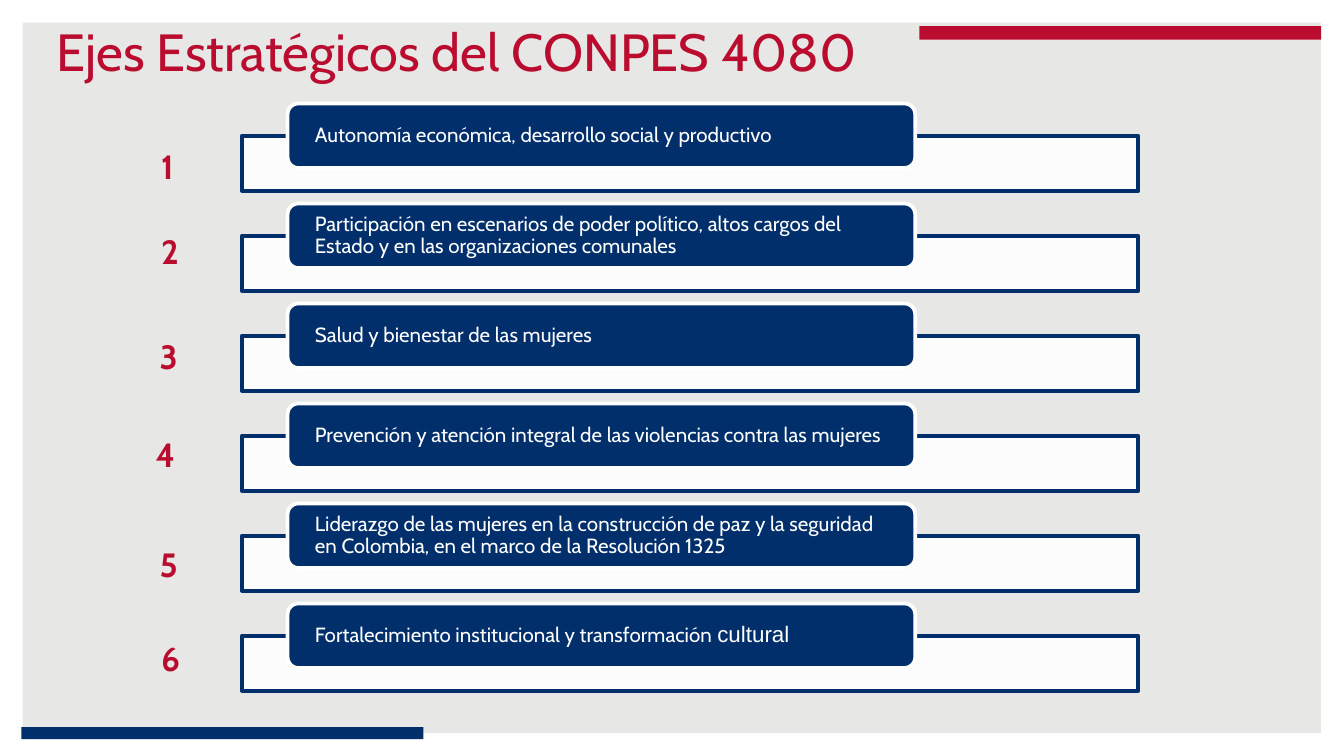
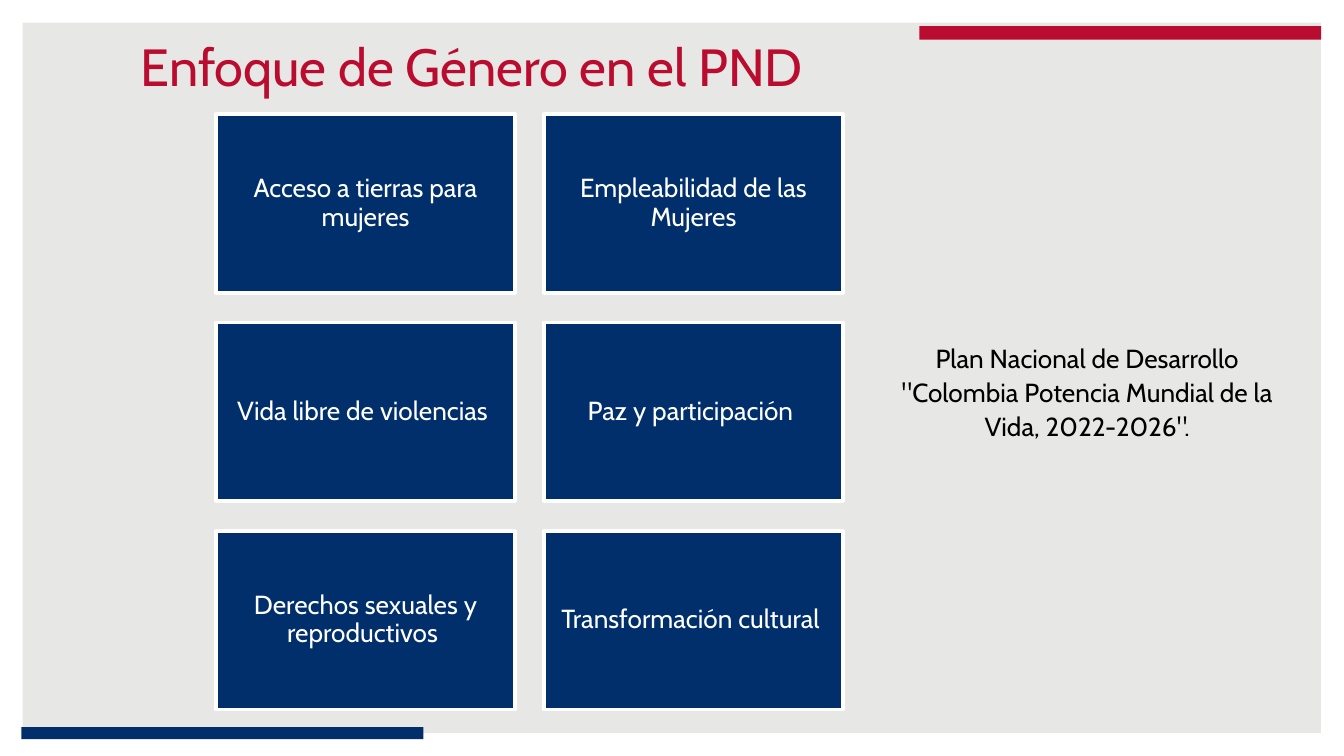
from typing import NamedTuple

from lxml import etree
from pptx import Presentation
from pptx.dml.color import RGBColor
from pptx.enum.shapes import MSO_SHAPE
from pptx.enum.text import MSO_ANCHOR, PP_ALIGN
from pptx.oxml.ns import qn
from pptx.util import Inches, Pt

RECTANGLE = MSO_SHAPE.RECTANGLE
ROUNDED = MSO_SHAPE.ROUNDED_RECTANGLE
FRAME = MSO_SHAPE.FRAME
MIDDLE, TOP = MSO_ANCHOR.MIDDLE, MSO_ANCHOR.TOP
LEFT, CENTER = PP_ALIGN.LEFT, PP_ALIGN.CENTER

NAVY, RED, GREY = "002F6C", "BA0C2F", "E7E7E5"
WHITE, BLACK = "FFFFFF", "000000"
FONT = "Cabin"
BLANK_LAYOUT = 6
GRID_UNIT = Inches(0.1)


class Box(NamedTuple):
    """A region measured in grid columns and rows."""
    left: float
    top: float
    width: float
    height: float

    def inside(self, left, top, width, height):
        """Return a box placed relative to this one."""
        return Box(self.left + left, self.top + top, width, height)

    def cell(self, column, row, columns, rows, gap):
        """Return one cell of an even grid that fills this box."""
        width = (self.width - gap * (columns - 1)) / columns
        height = (self.height - gap * (rows - 1)) / rows
        return self.inside(column * (width + gap), row * (height + gap), width, height)

    def lengths(self):
        """Return the four lengths that python-pptx expects."""
        return [round(value * GRID_UNIT) for value in self]


PAGE = Box(0, 0, 100, 56.25)

AXES = [
    (["Autonomía económica, desarrollo social y productivo"], 11, 10.4),
    (["Participación en escenarios de poder político, altos cargos del "
      "Estado y en las organizaciones comunales"], 11, 16.7),
    (["Salud y bienestar de las mujeres"], 10.9, 24.5),
    (["Prevención y atención integral de las violencias contra las mujeres"], 10.6, 31.8),
    (["Liderazgo de las mujeres en la construcción de paz y la seguridad "
      "en Colombia, en el marco de la Resolución 1325"], 10.9, 40),
    (["Fortalecimiento institucional y transformación ", "cultural"], 11, 47),
]
TOPICS = [
    "Acceso a tierras para mujeres", "Empleabilidad de las Mujeres",
    "Vida libre de violencias ", "Paz y participación ",
    "Derechos sexuales y reproductivos ", "Transformación cultural ",
]


def color(hex_string):
    """Turn a hex string into a colour."""
    return RGBColor.from_string(hex_string)


def add_block(slide, box, fill, line=None, kind=RECTANGLE, opacity=None):
    """Add a flat preset shape, outlined and translucent on request."""
    shape = slide.shapes.add_shape(kind, *box.lengths())
    shape.shadow.inherit = False
    shape.fill.solid()
    shape.fill.fore_color.rgb = color(fill)
    if line:
        shape.line.color.rgb = color(line)
        shape.line.width = Pt(2)
    else:
        shape.line.fill.background()
    if opacity:
        fill_color = shape._element.spPr.find(qn("a:solidFill"))[0]
        etree.SubElement(fill_color, qn("a:alpha")).set("val", str(opacity * 1000))
    return shape


def write(shape, parts, size, ink, align=LEFT, anchor=MIDDLE, insets=(0.1, 0.05),
          bold=False, wrap=True, spacing=None, after=0):
    """Write one paragraph made of the given parts and return its runs."""
    frame = shape.text_frame
    frame.word_wrap = wrap
    frame.vertical_anchor = anchor
    frame.margin_left = frame.margin_right = Inches(insets[0])
    frame.margin_top = frame.margin_bottom = Inches(insets[1])
    frame.text = parts[0]
    paragraph = frame.paragraphs[0]
    for part in parts[1:]:
        paragraph.add_run().text = part
    paragraph.alignment = align
    paragraph.space_after = Pt(after)
    if spacing:
        paragraph.line_spacing = spacing
    for run in paragraph.runs:
        run.font.name = FONT
        run.font.size = Pt(size)
        run.font.bold = bold
        run.font.color.rgb = color(ink)
    return paragraph.runs


def add_text(slide, box, text, size, ink, **style):
    """Add a text box with one line of style."""
    shape = slide.shapes.add_textbox(*box.lengths())
    write(shape, [text], size, ink, **style)


def add_page(presentation, title, title_box):
    """Add a slide with the shared frame, bands and title."""
    slide = presentation.slides.add_slide(presentation.slide_layouts[BLANK_LAYOUT])
    slide.background.fill.solid()
    slide.background.fill.fore_color.rgb = color(GREY)
    add_block(slide, PAGE, WHITE, kind=FRAME).adjustments[0] = 0.03
    add_block(slide, PAGE.inside(68.4, 1.95, 29.9, 1), RED)
    add_block(slide, PAGE.inside(1.6, 54.1, 29.9, 0.9), NAVY)
    add_text(slide, title_box, title, 28, RED, align=CENTER)
    return slide


def add_axis(slide, box, parts):
    """Add a pale bar with a navy label overlapping its top edge."""
    add_block(slide, box.inside(0, 2.4, box.width, 4.1), WHITE, NAVY, opacity=90)
    label = add_block(slide, box.inside(3.4, 0, 46.7, 4.8), NAVY, WHITE, ROUNDED)
    runs = write(label, parts, 11, WHITE, insets=(0.18, 0), spacing=0.9)
    for run in runs[1:]:
        run.font.name = "Arial"
        run.font.size = Pt(12)


def add_axes(slide, box):
    """Stack the numbered axes in the box."""
    for row, (parts, _, _) in enumerate(AXES):
        add_axis(slide, box.cell(0, row, 1, len(AXES), 0.94), parts)
    for number, (_, left, top) in enumerate(AXES, 1):
        add_text(slide, PAGE.inside(left, top, 3.4, 4), str(number), 18, RED,
                 anchor=TOP, bold=True, wrap=False)


def add_topics(slide, box):
    """Fill the box with two columns of topic cards."""
    for index, topic in enumerate(TOPICS):
        row, column = divmod(index, 2)
        card = add_block(slide, box.cell(column, row, 2, 3, 2.2), NAVY, WHITE)
        write(card, [topic], 14, WHITE, align=CENTER, insets=(0.06, 0.06), spacing=0.9)


def build_axes_slide(presentation):
    """Build the slide of strategic axes."""
    slide = add_page(presentation, "Ejes Estratégicos del CONPES 4080 ",
                     PAGE.inside(-8.1, 1.3, 85, 5))
    add_axes(slide, PAGE.inside(18, 7.7, 66.7, 43.7))


def build_topics_slide(presentation):
    """Build the slide of gender topics in the plan."""
    slide = add_page(presentation, "Enfoque de Género en el PND",
                     PAGE.inside(-7.4, 2.4, 85, 5))
    add_text(slide, PAGE.inside(64.8, 24.8, 32.2, 8.5),
             'Plan Nacional de Desarrollo "Colombia Potencia Mundial de la Vida, 2022-2026".',
             14, BLACK, align=CENTER, anchor=TOP, spacing=1.08, after=8)
    add_topics(slide, PAGE.inside(16.1, 8.5, 46.6, 44.3))


def main():
    """Build and save the presentation."""
    presentation = Presentation()
    presentation.slide_width = round(PAGE.width * GRID_UNIT)
    presentation.slide_height = round(PAGE.height * GRID_UNIT)
    build_axes_slide(presentation)
    build_topics_slide(presentation)
    presentation.save("out.pptx")


if __name__ == "__main__":
    main()
